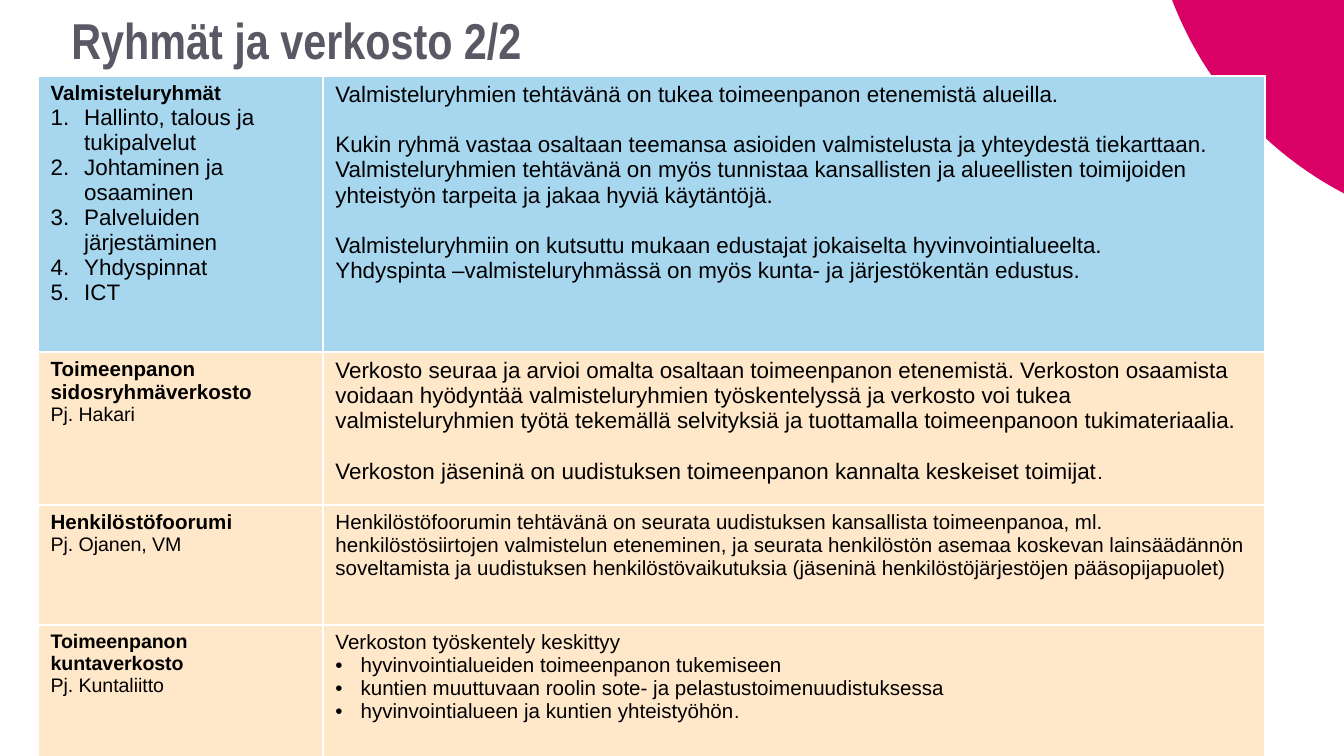
import math
import pptx
import pptx.util
import pptx.dml.color
import pptx.enum.text
import pptx.oxml.ns
import lxml.etree

Pt = pptx.util.Pt
INK = {"pink": "D90066", "gray": "595965", "blue": "A7D6EF",
       "sand": "FFE7C9", "black": "000000", "white": "FFFFFF"}
COLS = [152.6, 504.7]
NUM = ("buAutoNum", "type", "arabicPeriod", 18)
DOT = ("buChar", "char", "•", 13.5)
GAP = 13.6


def rgb(name):
    return pptx.dml.color.RGBColor.from_string(INK[name])


def sub(node, tag, **attrs):
    return lxml.etree.SubElement(node, pptx.oxml.ns.qn("a:" + tag), **attrs)


def line(*runs, mark=None, gap=0):
    return runs, mark, gap


def head(text, size=11):
    return line((text, size, True))


def body(text, size=12, mark=None, gap=0):
    return line((text, size, False), mark=mark, gap=gap)


def add_run(para, text, size, bold, face="Arial", ink="black"):
    run = para.add_run()
    run.text = text
    font = run.font
    font.size, font.bold, font.name = Pt(size), bold, face
    font.color.rgb = rgb(ink)


def add_mark(para, mark):
    tag, key, value, dent = mark
    props = para._p.get_or_add_pPr()
    props.set("marL", str(Pt(dent)))
    props.set("indent", str(-Pt(dent)))
    sub(props, "buFont", typeface="Arial")
    sub(props, tag, **{key: value})


def add_edges(cell):
    props = cell._tc.get_or_add_tcPr()
    for at, side in enumerate(("lnL", "lnR", "lnT", "lnB")):
        edge = lxml.etree.Element(pptx.oxml.ns.qn("a:" + side), w=str(Pt(1)))
        sub(sub(edge, "solidFill"), "srgbClr", val=INK["white"])
        props.insert(at, edge)


def fill_cell(cell, lines, ink):
    cell.fill.solid()
    cell.fill.fore_color.rgb = rgb(ink)
    cell.margin_left = cell.margin_right = Pt(6.7)
    cell.margin_top = cell.margin_bottom = Pt(3.4)
    add_edges(cell)
    frame = cell.text_frame
    for at, (runs, mark, gap) in enumerate(lines):
        para = frame.paragraphs[0] if at == 0 else frame.add_paragraph()
        if gap:
            para.space_before = Pt(gap)
        if mark:
            add_mark(para, mark)
        for run in runs:
            add_run(para, *run)


def add_title(slide, text):
    title = slide.shapes.title
    title.left, title.top = Pt(31), Pt(4.3)
    title.width, title.height = Pt(535.7), Pt(36.7)
    frame = title.text_frame
    frame.auto_size = pptx.enum.text.MSO_AUTO_SIZE.NONE
    frame.vertical_anchor = pptx.enum.text.MSO_ANCHOR.BOTTOM
    para = frame.paragraphs[0]
    para.alignment = pptx.enum.text.PP_ALIGN.LEFT
    add_run(para, text, 27, True, "Arial Narrow", "gray")


def add_corner(slide, mid_x=811, mid_y=-70, radius=196, edge=720, steps=24):
    start = math.pi - math.asin(-mid_y / radius)
    end = math.acos((edge - mid_x) / radius)
    turns = [start + (end - start) * at / steps for at in range(steps + 1)]
    arc = [(Pt(mid_x + radius * math.cos(turn)),
            Pt(mid_y + radius * math.sin(turn))) for turn in turns]
    pen = slide.shapes.build_freeform(*arc[0])
    pen.add_line_segments(arc[1:] + [(Pt(edge), 0)], close=True)
    shape = pen.convert_to_shape()
    shape.shadow.inherit = False
    shape.fill.solid()
    shape.fill.fore_color.rgb = rgb("pink")
    shape.line.fill.background()


def add_grid(slide, rows):
    high = sum(row[0] for row in rows)
    table = slide.shapes.add_table(len(rows), len(COLS), Pt(20.4), Pt(40.6),
                                   Pt(sum(COLS)), Pt(high)).table
    table.first_row = table.horz_banding = False
    for col, width in zip(table.columns, COLS):
        col.width = Pt(width)
    for at, (height, ink, *cells) in enumerate(rows):
        table.rows[at].height = Pt(height)
        for col, lines in enumerate(cells):
            fill_cell(table.cell(at, col), lines, ink)


def main():
    deck = pptx.Presentation()
    deck.slide_width, deck.slide_height = Pt(720), Pt(405)
    slide = deck.slides.add_slide(deck.slide_layouts[5])
    add_corner(slide)
    add_title(slide, "Ryhmät ja verkosto 2/2")
    groups = ["Hallinto, talous ja tukipalvelut", "Johtaminen ja osaaminen",
              "Palveluiden järjestäminen", "Yhdyspinnat", "ICT"]
    add_grid(slide, [
        (148, "blue",
         [head("Valmisteluryhmät")] + [body(name, mark=NUM) for name in groups],
         [body("Valmisteluryhmien tehtävänä on tukea toimeenpanon etenemistä alueilla."),
          body("Kukin ryhmä vastaa osaltaan teemansa asioiden valmistelusta ja yhteydestä "
               "tiekarttaan. Valmisteluryhmien tehtävänä on myös tunnistaa kansallisten ja "
               "alueellisten toimijoiden yhteistyön tarpeita ja jakaa hyviä käytäntöjä.",
               gap=GAP),
          body("Valmisteluryhmiin on kutsuttu mukaan edustajat jokaiselta "
               "hyvinvointialueelta.", gap=GAP),
          body("Yhdyspinta –valmisteluryhmässä on myös kunta- ja järjestökentän edustus.")]),
        (82, "sand",
         [head("Toimeenpanon sidosryhmäverkosto"), body("Pj. Hakari", 10.5)],
         [body("Verkosto seuraa ja arvioi omalta osaltaan toimeenpanon etenemistä. Verkoston "
               "osaamista voidaan hyödyntää valmisteluryhmien työskentelyssä ja verkosto voi "
               "tukea valmisteluryhmien työtä tekemällä selvityksiä ja tuottamalla "
               "toimeenpanoon tukimateriaalia."),
          line(("Verkoston jäseninä on uudistuksen toimeenpanon kannalta keskeiset toimijat",
                12, False), (".", 10.5, False), gap=GAP)]),
        (64.2, "sand",
         [head("Henkilöstöfoorumi"), body("Pj. Ojanen, VM", 10.5)],
         [body("Henkilöstöfoorumin tehtävänä on seurata uudistuksen kansallista "
               "toimeenpanoa, ml. henkilöstösiirtojen valmistelun eteneminen, ja seurata "
               "henkilöstön asemaa koskevan lainsäädännön soveltamista ja uudistuksen "
               "henkilöstövaikutuksia (jäseninä henkilöstöjärjestöjen pääsopijapuolet)", 11)]),
        (70.5, "sand",
         [head("Toimeenpanon kuntaverkosto", 10.5), body("Pj. Kuntaliitto", 10.5)],
         [body("Verkoston työskentely keskittyy", 11),
          body("hyvinvointialueiden toimeenpanon tukemiseen", 11, DOT),
          body("kuntien muuttuvaan roolin sote- ja pelastustoimenuudistuksessa", 11, DOT),
          line(("hyvinvointialueen ja kuntien yhteistyöhön", 11, False),
               (".", 10.5, False), mark=DOT)]),
    ])
    deck.save("out.pptx")


if __name__ == "__main__":
    main()
